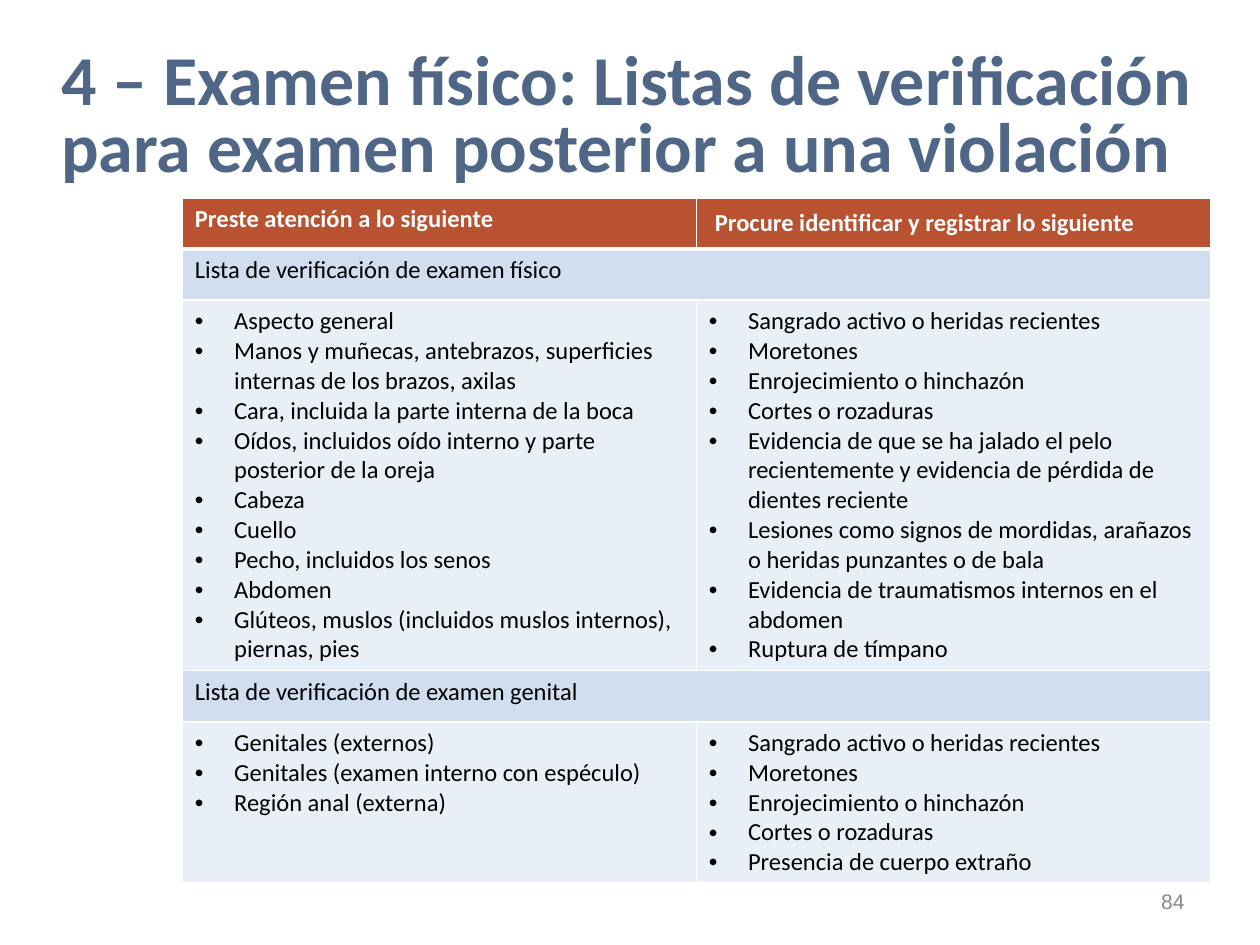
from lxml.etree import SubElement
from pptx import Presentation
from pptx.dml.color import RGBColor
from pptx.enum.text import MSO_ANCHOR, PP_ALIGN
from pptx.oxml.ns import qn
from pptx.util import Cm, Pt

BLUE_GREY = RGBColor(0x50, 0x66, 0x87)
GREY = RGBColor(0x88, 0x88, 0x88)
RUST = RGBColor(0xB8, 0x52, 0x31)
SECTION_BLUE = RGBColor(0xD0, 0xDE, 0xEF)
PALE_BLUE = RGBColor(0xE9, 0xEF, 0xF7)
WHITE = RGBColor(0xFF, 0xFF, 0xFF)
BLACK = RGBColor(0, 0, 0)

TITLE = {"name": "Calibri", "size": Pt(40), "bold": True}
NUMBER = {"name": "Arial", "size": Pt(12), "bold": False}
HEADING = {"name": "Calibri", "size": Pt(14), "bold": True}
BODY = {"name": "Calibri", "size": Pt(14), "bold": False}
PADDING = {
    "margin_left": Cm(0.25),
    "margin_right": Cm(0.25),
    "margin_top": Cm(0.13),
    "margin_bottom": Cm(0.13),
}
SECOND_HEADING = {
    "margin_left": Cm(0.37),
    "margin_right": Cm(0.18),
    "margin_top": 0,
    "margin_bottom": 0,
    "vertical_anchor": MSO_ANCHOR.MIDDLE,
}

COMMON_SIGNS = [
    "Sangrado activo o heridas recientes",
    "Moretones",
    "Enrojecimiento o hinchazón",
    "Cortes o rozaduras",
]
BODY_PARTS = [
    "Aspecto general",
    "Manos y muñecas, antebrazos, superficies internas de los brazos, axilas",
    "Cara, incluida la parte interna de la boca",
    "Oídos, incluidos oído interno y parte posterior de la oreja",
    "Cabeza",
    "Cuello",
    "Pecho, incluidos los senos",
    "Abdomen",
    "Glúteos, muslos (incluidos muslos internos), piernas, pies",
]
BODY_SIGNS = COMMON_SIGNS + [
    "Evidencia de que se ha jalado el pelo recientemente y evidencia de pérdida de dientes reciente",
    "Lesiones como signos de mordidas, arañazos o heridas punzantes o de bala",
    "Evidencia de traumatismos internos en el abdomen",
    "Ruptura de tímpano",
]
GENITAL_PARTS = [
    "Genitales (externos)",
    "Genitales (examen interno con espéculo)",
    "Región anal (externa)",
]
GENITAL_SIGNS = COMMON_SIGNS + ["Presencia de cuerpo extraño"]


def apply_format(target, values):
    for name, value in values.items():
        setattr(target, name, value)


class PageBuilder:
    def __init__(self, page):
        self.page = page

    def add_span(self, para, text, style, color):
        span = para.add_run()
        span.text = text
        apply_format(span.font, style)
        span.font.color.rgb = color

    def text(self, position, text, style, color, layout):
        box = self.page.shapes.add_textbox(*map(Cm, position))
        frame = box.text_frame
        apply_format(frame, PADDING)
        apply_format(frame, {"word_wrap": True, "vertical_anchor": MSO_ANCHOR.MIDDLE})
        para = frame.paragraphs[0]
        apply_format(para, layout)
        self.add_span(para, text, style, color)

    def bullet(self, para):
        properties = para._p.get_or_add_pPr()
        properties.set("marL", str(Cm(0.79)))
        properties.set("indent", str(-Cm(0.79)))
        color = SubElement(properties, qn("a:buClr"))
        SubElement(color, qn("a:srgbClr"), val=str(BLACK))
        SubElement(properties, qn("a:buFont"), typeface="Arial")
        SubElement(properties, qn("a:buChar"), char="•")

    def borders(self, cell, top, bottom):
        properties = cell._tc.get_or_add_tcPr()
        for side, width in (("L", 1), ("R", 1), ("T", top), ("B", bottom)):
            line = SubElement(properties, qn(f"a:ln{side}"), w=str(Pt(width)))
            fill = SubElement(line, qn("a:solidFill"))
            SubElement(fill, qn("a:srgbClr"), val=str(WHITE))

    def cell(self, cell, lines, fill, style, color, bulleted):
        apply_format(cell, PADDING)
        cell.fill.solid()
        cell.fill.fore_color.rgb = fill
        frame = cell.text_frame
        for index, line in enumerate(lines):
            para = frame.add_paragraph() if index else frame.paragraphs[0]
            if bulleted:
                self.bullet(para)
            self.add_span(para, line, style, color)

    def table(self, left, top, column_width, heights, rows):
        width, height = Cm(2 * column_width), Cm(sum(heights))
        shape = self.page.shapes.add_table(len(rows), 2, Cm(left), Cm(top), width, height)
        table = shape.table
        apply_format(table, {"first_row": False, "horz_banding": False})
        for column in table.columns:
            column.width = Cm(column_width)
        for index, (row_height, (contents, *look)) in enumerate(zip(heights, rows)):
            table.rows[index].height = Cm(row_height)
            for column in range(2):
                edges = (3 if index == 1 else 1, 3 if index == 0 else 1)
                self.borders(table.cell(index, column), *edges)
            if len(contents) == 1:
                table.cell(index, 0).merge(table.cell(index, 1))
            for column, lines in enumerate(contents):
                self.cell(table.cell(index, column), lines, *look)
        return table


def main():
    deck = Presentation()
    apply_format(deck, {"slide_width": Cm(25.4), "slide_height": Cm(19.05)})
    builder = PageBuilder(deck.slides.add_slide(deck.slide_layouts[6]))
    builder.text(
        (0.99, 0.81, 23.5, 3.18),
        "4 – Examen físico: Listas de verificación para examen posterior a una violación",
        TITLE, BLUE_GREY, {"line_spacing": 0.8},
    )
    builder.text(
        (18.21, 17.65, 5.92, 1.02), "84", NUMBER, GREY, {"alignment": PP_ALIGN.RIGHT}
    )
    heading = (RUST, HEADING, WHITE, False)
    section = (SECTION_BLUE, BODY, BLACK, False)
    checklist = (PALE_BLUE, BODY, BLACK, True)
    table = builder.table(3.68, 3.99, 10.36, (1.03, 1.03, 7.47, 1.03, 3.25), [
        ([["Preste atención a lo siguiente"],
          ["Procure identificar y registrar lo siguiente"]], *heading),
        ([["Lista de verificación de examen físico"]], *section),
        ([BODY_PARTS, BODY_SIGNS], *checklist),
        ([["Lista de verificación de examen genital"]], *section),
        ([GENITAL_PARTS, GENITAL_SIGNS], *checklist),
    ])
    apply_format(table.cell(0, 1), SECOND_HEADING)
    deck.save("out.pptx")


if __name__ == "__main__":
    main()
